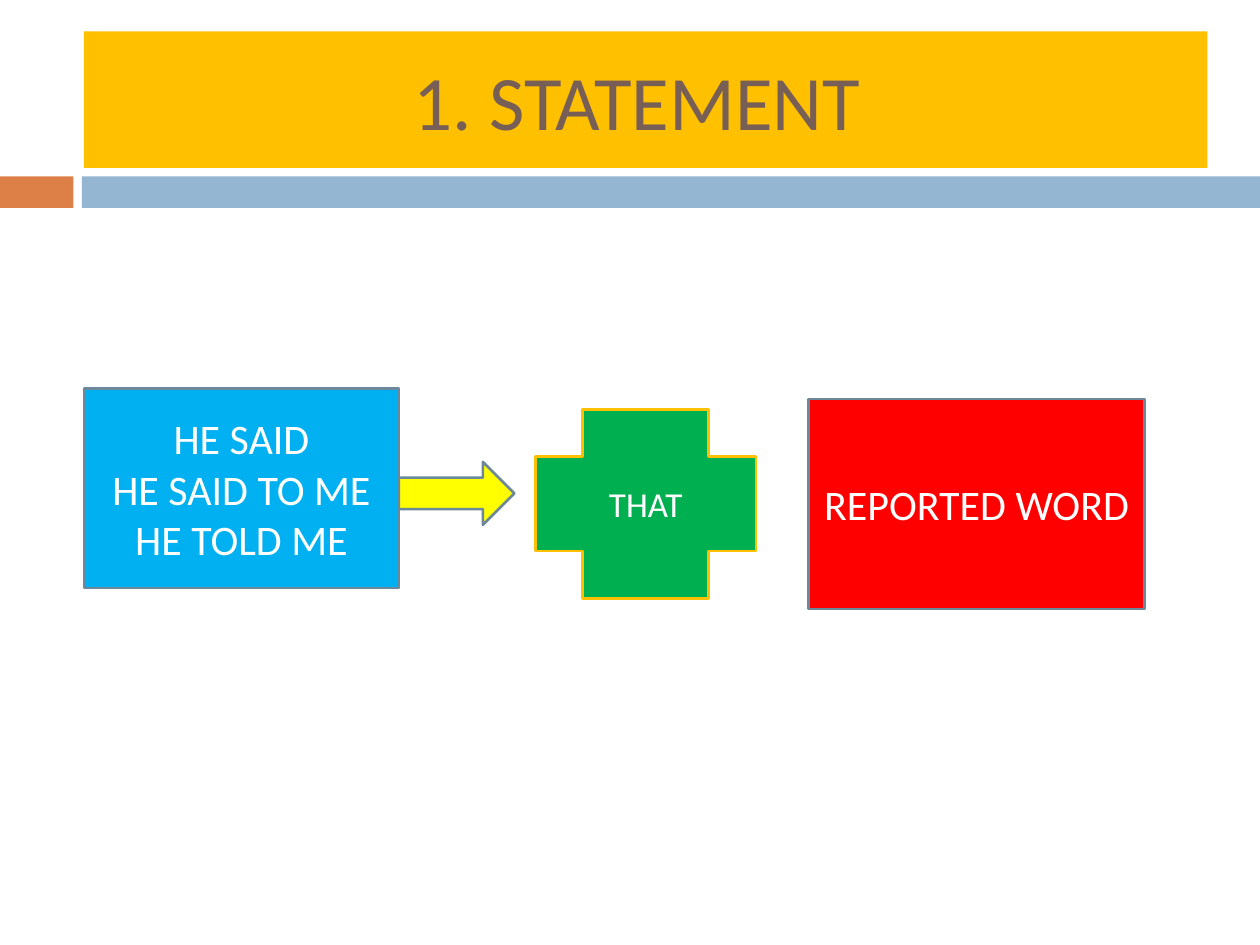
from dataclasses import dataclass

from pptx import Presentation
from pptx import util as u
from pptx.dml.color import RGBColor
from pptx.enum import shapes, text

COLUMNS, ROWS = 120, 90  # twelve grid cells to the inch
CELL = u.Inches(10) // COLUMNS


@dataclass(frozen=True)
class Theme:
    font: str = "Calibri"
    title_size: int = 44
    box_size: int = 24
    link_size: int = 20
    line_width: float = 1.5
    title: str = "775F55"
    white: str = "FFFFFF"
    gold: str = "FFC000"
    orange: str = "DD8047"
    pale_blue: str = "94B6D2"
    outline: str = "6D879B"
    sky: str = "00B0F0"
    yellow: str = "FFFF00"
    green: str = "00B050"
    red: str = "FF0000"


THEME = Theme()
SHAPE = shapes.MSO_SHAPE


def add_block(slide, kind, area, fill, line=None):
    """Add a filled shape; area is column, row, columns wide, rows high."""
    shape = slide.shapes.add_shape(kind, *(round(CELL * n) for n in area))
    shape.shadow.inherit = False
    shape.fill.solid()
    shape.fill.fore_color.rgb = RGBColor.from_string(fill)
    if line:
        shape.line.color.rgb = RGBColor.from_string(line)
        shape.line.width = u.Pt(THEME.line_width)
    else:
        shape.line.fill.background()
    return shape


def write(shape, words, size, color=THEME.white):
    """Set centred text, one paragraph for each line of words."""
    frame = shape.text_frame
    frame.text = words
    frame.word_wrap = True
    frame.vertical_anchor = text.MSO_ANCHOR.MIDDLE
    for paragraph in frame.paragraphs:
        paragraph.alignment = text.PP_ALIGN.CENTER
        for run in paragraph.runs:
            run.font.name = THEME.font
            run.font.size = u.Pt(size)
            run.font.color.rgb = RGBColor.from_string(color)


def add_header(slide):
    # Two-part band under the title
    band_top, band_height, gap_end = 16.8, 3, 7.8
    add_block(slide, SHAPE.RECTANGLE, (0, band_top, 7, band_height), THEME.orange)
    add_block(slide, SHAPE.RECTANGLE,
              (gap_end, band_top, COLUMNS - gap_end, band_height), THEME.pale_blue)
    # Title
    title = add_block(slide, SHAPE.RECTANGLE, (8, 3, 107, 13), THEME.gold)
    write(title, "1. STATEMENT ", THEME.title_size, THEME.title)


def add_formula(slide):
    # Reporting clause, arrow, linking word, reported clause
    reporting = add_block(slide, SHAPE.RECTANGLE, (8, 37, 30, 19), THEME.sky, THEME.outline)
    write(reporting, "HE SAID\nHE SAID TO ME\nHE TOLD ME", THEME.box_size)
    add_block(slide, SHAPE.RIGHT_ARROW, (38, 44, 11, 6), THEME.yellow, THEME.outline)
    link = add_block(slide, SHAPE.CROSS, (51, 39, 21, 18), THEME.green, THEME.gold)
    write(link, "THAT", THEME.link_size)
    reported = add_block(slide, SHAPE.RECTANGLE, (77, 38, 32, 20), THEME.red, THEME.outline)
    write(reported, "REPORTED WORD", THEME.box_size)


def main():
    presentation = Presentation()
    presentation.slide_width = CELL * COLUMNS
    presentation.slide_height = CELL * ROWS
    slide = presentation.slides.add_slide(presentation.slide_layouts[6])
    add_header(slide)
    add_formula(slide)
    presentation.save("out.pptx")


if __name__ == "__main__":
    main()
